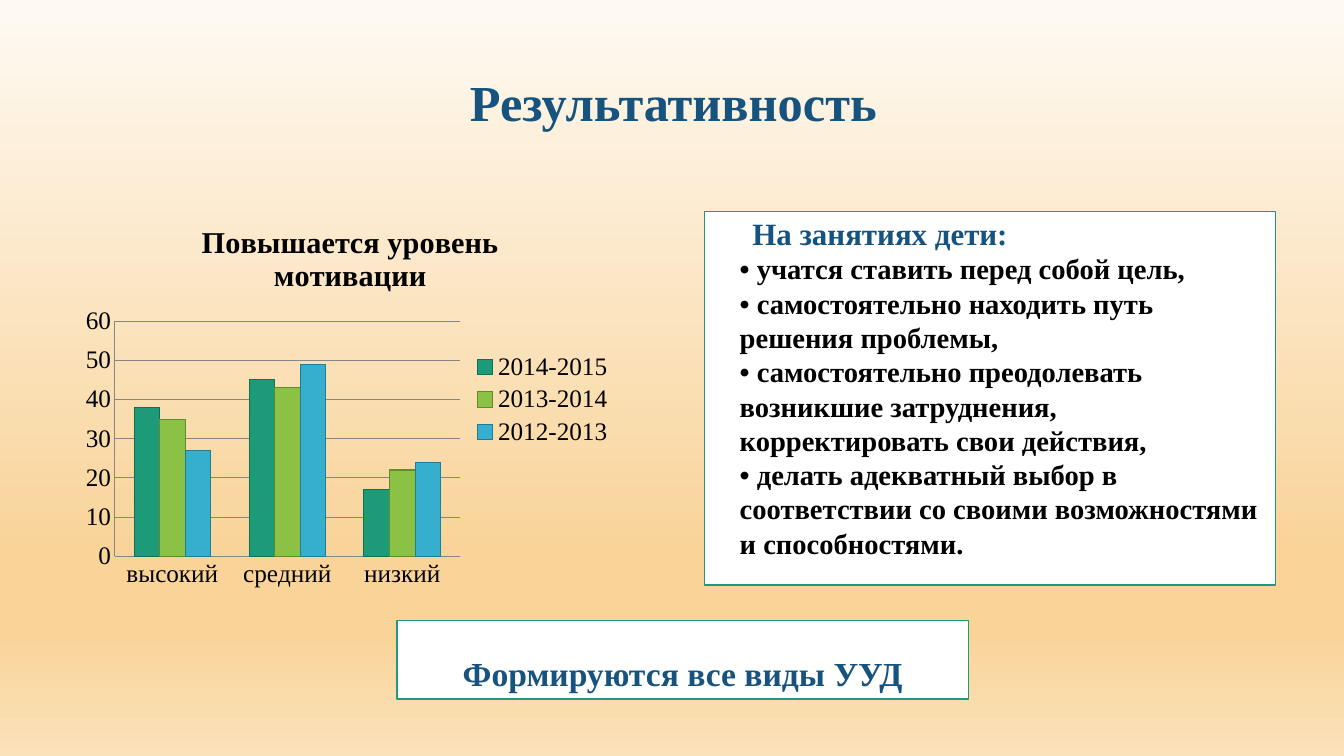
import lxml.etree
import pptx
import pptx.chart.data
import pptx.dml.color
import pptx.enum.chart
import pptx.enum.shapes
import pptx.enum.text
import pptx.oxml
import pptx.oxml.ns
import pptx.util

Pt = pptx.util.Pt
RGBColor = pptx.dml.color.RGBColor
Align = pptx.enum.text.PP_ALIGN
Anchor = pptx.enum.text.MSO_ANCHOR
qn = pptx.oxml.ns.qn

FONT = "Times New Roman"
BLUE = RGBColor(0x16, 0x53, 0x7F)
BLACK = RGBColor(0, 0, 0)
WHITE = RGBColor(255, 255, 255)
GREEN = RGBColor(0x1D, 0x9A, 0x78)
GRAY = RGBColor(0x86, 0x86, 0x86)
CREAM = RGBColor(0xFE, 0xFA, 0xF3)
SAND = RGBColor(0xF9, 0xD3, 0x98)
PALE = RGBColor(0xFB, 0xE2, 0xBA)

BACKGROUND = [(0, CREAM), (74, SAND), (83, SAND), (100, PALE)]
LEVELS = ["высокий", "средний", "низкий"]
YEARS = [
    ("2014-2015", (38, 45, 17), GREEN, RGBColor(0x12, 0x6E, 0x55)),
    ("2013-2014", (35, 43, 22), RGBColor(0x8B, 0xC1, 0x45), RGBColor(0x62, 0x8C, 0x2C)),
    ("2012-2013", (27, 49, 24), RGBColor(0x36, 0xAF, 0xCE), RGBColor(0x22, 0x7C, 0x94)),
]
SKILLS = [
    "• учатся ставить перед собой цель,",
    "• самостоятельно находить путь решения проблемы,",
    "• самостоятельно преодолевать возникшие затруднения, корректировать свои действия,",
    "• делать адекватный выбор в соответствии со своими возможностями и способностями.",
]


def paint_background(s):
    """Fill the slide with a vertical gradient."""
    fill = s.background.fill
    fill.gradient()
    grad = s._element.find(".//" + qn("a:gradFill"))
    stops = grad.find(qn("a:gsLst"))
    for stop in list(stops):
        stops.remove(stop)
    for position, color in BACKGROUND:
        stop = lxml.etree.SubElement(stops, qn("a:gs"), pos=str(position * 1000))
        lxml.etree.SubElement(stop, qn("a:srgbClr"), val=str(color))
    lin = grad.find(qn("a:lin"))
    lin.set("ang", "5400000")
    lin.set("scaled", "0")


def set_font(font, size, color, bold=False):
    """Apply the slide typeface to a font."""
    font.name = FONT
    font.size = Pt(size)
    font.bold = bold
    font.color.rgb = color


def add_text(tf, text, size=24, color=BLUE, align=Align.CENTER, spacing=0.9, indent=0):
    """Write one bold paragraph, reusing the empty first one."""
    p = tf.paragraphs[0] if not tf.text else tf.add_paragraph()
    p.alignment = align
    p.line_spacing = spacing
    if indent:
        p._p.get_or_add_pPr().set("marL", str(Pt(indent)))
    r = p.add_run()
    r.text = text
    set_font(r.font, size, color, bold=True)


def add_title(s, text):
    """Add the centred slide heading."""
    tf = s.shapes.add_textbox(Pt(67), Pt(45), Pt(828), Pt(60)).text_frame
    tf.word_wrap = True
    tf.vertical_anchor = Anchor.MIDDLE
    add_text(tf, text, size=36)


def add_panel(s, left, top, width, height, anchor):
    """Add a white framed panel and return its text frame."""
    sp = s.shapes.add_shape(pptx.enum.shapes.MSO_SHAPE.RECTANGLE,
                            Pt(left), Pt(top), Pt(width), Pt(height))
    sp.shadow.inherit = False
    sp.fill.solid()
    sp.fill.fore_color.rgb = WHITE
    sp.line.color.rgb = GREEN
    sp.line.width = Pt(1)
    tf = sp.text_frame
    tf.word_wrap = True
    tf.vertical_anchor = anchor
    return tf


def place_plot(chart, **box):
    """Fix the inner plot area as fractions of the chart."""
    plot_area = chart._chartSpace.chart.plotArea
    for old in plot_area.findall(qn("c:layout")):
        plot_area.remove(old)
    layout = lxml.etree.Element(qn("c:layout"))
    manual = lxml.etree.SubElement(layout, qn("c:manualLayout"))
    values = {"layoutTarget": "inner", "xMode": "edge", "yMode": "edge", **box}
    for name, value in values.items():
        lxml.etree.SubElement(manual, qn("c:" + name), val=str(value))
    plot_area.insert(0, layout)


def add_motivation_chart(s):
    """Add the clustered columns of motivation levels by year."""
    data = pptx.chart.data.CategoryChartData()
    data.categories = LEVELS
    for year, values, _, _ in YEARS:
        data.add_series(year, values)
    chart = s.shapes.add_chart(pptx.enum.chart.XL_CHART_TYPE.COLUMN_CLUSTERED,
                               Pt(54.7), Pt(145.4), Pt(391), Pt(280), data).chart
    set_font(chart.font, 18, BLACK)
    chart.has_title = True
    tf = chart.chart_title.text_frame
    tf.text = "Повышается уровень мотивации"
    set_font(tf.paragraphs[0].runs[0].font, 21.6, BLACK, bold=True)
    chart.chart_title.include_in_layout = False
    chart.has_legend = True
    chart.legend.position = pptx.enum.chart.XL_LEGEND_POSITION.RIGHT
    chart.legend.include_in_layout = False
    plot = chart.plots[0]
    plot.gap_width = 150
    plot.overlap = 0
    plot.vary_by_categories = False
    for series, (_, _, color, edge) in zip(plot.series, YEARS):
        series.format.fill.solid()
        series.format.fill.fore_color.rgb = color
        series.format.line.color.rgb = edge
        series.format.line.width = Pt(0.75)
    for axis in (chart.category_axis, chart.value_axis):
        axis.major_tick_mark = pptx.enum.chart.XL_TICK_MARK.NONE
        axis.format.line.color.rgb = GRAY
    chart.value_axis.minimum_scale = 0
    chart.value_axis.maximum_scale = 60
    chart.value_axis.major_unit = 10
    chart.value_axis.major_gridlines.format.line.color.rgb = GRAY
    place_plot(chart, x=0.07, y=0.3, w=0.63, h=0.6)


def main():
    """Build the results slide."""
    prs = pptx.Presentation()
    prs.slide_width, prs.slide_height = Pt(960), Pt(540)
    s = prs.slides.add_slide(prs.slide_layouts[6])
    paint_background(s)
    add_title(s, "Результативность")
    tf = add_panel(s, 283.7, 443.4, 408, 56, Anchor.BOTTOM)
    add_text(tf, "Формируются все виды УУД")
    tf = add_panel(s, 503.3, 151, 408, 267, Anchor.TOP)
    add_text(tf, "На занятиях дети:", size=22.1, align=Align.LEFT, spacing=Pt(25), indent=27)
    for skill in SKILLS:
        add_text(tf, skill, size=20.4, color=BLACK, align=Align.LEFT,
                 spacing=Pt(24.5), indent=18)
    add_motivation_chart(s)
    prs.save("out.pptx")


if __name__ == "__main__":
    main()
